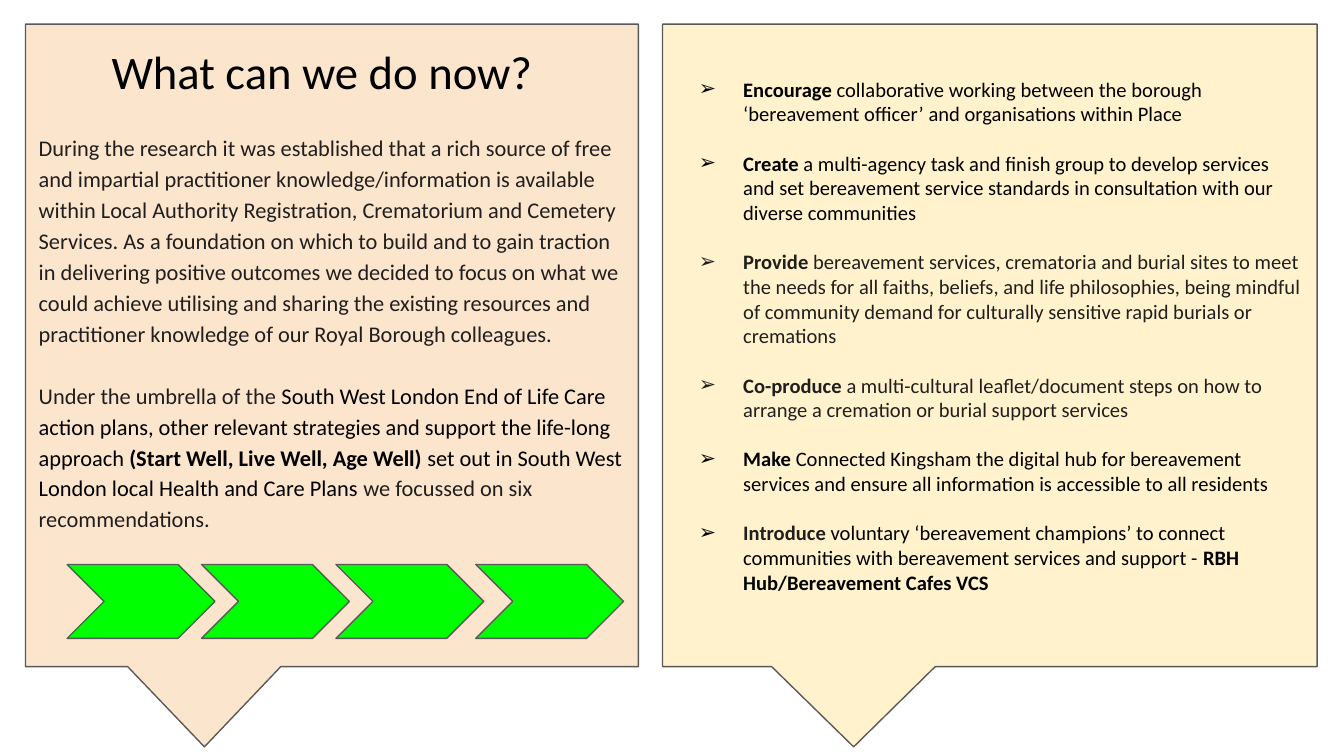
from lxml import etree
from pptx import Presentation
from pptx import util as u
from pptx.dml.color import RGBColor
from pptx.enum import shapes, text
from pptx.oxml.ns import qn

PX = 9144
BLACK, INK, EDGE = "000000", "201F1E", "595959"
PEACH, CREAM, GREEN = "FCE5CD", "FFF2CC", "00FF00"

INTRO = [
    [("During the research it was established that a rich source of free and impartial "
      "practitioner knowledge/information is available within Local Authority Registration, "
      "Crematorium and Cemetery Services. As a foundation on which to build and to gain "
      "traction in delivering positive outcomes we decided to focus on what we could achieve "
      "utilising and sharing the existing resources and practitioner knowledge of our Royal "
      "Borough colleagues.", INK, False)],
    [("Under the umbrella of the ", INK, False),
     ("South West London End of Life Care action plans, other relevant strategies and support "
      "the life-long approach ", BLACK, False),
     ("(Start Well, Live Well, Age Well)", BLACK, True),
     (" set out in South West London local Health and Care Plans ", BLACK, False),
     ("we focussed on six recommendations.", INK, False)],
]

ACTIONS = [
    (BLACK, [("Encourage ", BLACK, True),
             ("collaborative working between the borough ‘bereavement officer’ and "
              "organisations within Place", BLACK, False)]),
    (BLACK, [("Create ", BLACK, True),
             ("a multi-agency task and finish group to develop services and set bereavement "
              "service standards in consultation with our diverse communities", BLACK, False)]),
    (INK, [("Provide ", INK, True),
           ("bereavement services, crematoria and burial sites to meet the needs for all "
            "faiths, beliefs, and life philosophies, being mindful of community demand for "
            "culturally sensitive rapid burials or cremations", INK, False)]),
    (INK, [("Co-produce ", INK, True),
           ("a multi-cultural leaflet/document steps on how to arrange a cremation or burial "
            "support services", INK, False)]),
    (BLACK, [("Make ", BLACK, True),
             ("Connected Kingsham the digital hub for bereavement services and ensure all "
              "information is accessible to all residents", BLACK, False)]),
    (BLACK, [("Introduce ", INK, True),
             ("voluntary ‘bereavement champions’ to connect communities with bereavement "
              "services and support - ", BLACK, False),
             ("RBH Hub/Bereavement Cafes VCS", BLACK, True)]),
]


def px(n):
    """Turn px into EMU."""
    return u.Emu(n * PX)


def rgb(value):
    """Turn a hex string into a colour."""
    return RGBColor.from_string(value)


def add_runs(p, runs, size):
    """Add (words, colour, bold) runs to a paragraph."""
    for words, color, bold in runs:
        r = p.add_run()
        r.text = words
        r.font.name = "Calibri"
        r.font.size = u.Pt(size)
        r.font.bold = bold
        r.font.color.rgb = rgb(color)


def set_frame(tf, anchor, top, bottom):
    """Set wrapping, anchor and insets of a text frame."""
    tf.word_wrap = True
    tf.auto_size = text.MSO_AUTO_SIZE.NONE
    tf.vertical_anchor = anchor
    tf.margin_left = tf.margin_right = px(10)
    tf.margin_top, tf.margin_bottom = px(top), px(bottom)


def add_paragraph(tf, i, gap, spacing):
    """Return the i-th paragraph, left aligned, with a gap above all but the first."""
    p = tf.add_paragraph() if i else tf.paragraphs[0]
    p.alignment = text.PP_ALIGN.LEFT
    p.line_spacing = spacing
    p.space_before = u.Pt(gap if i else 0)
    return p


def add_bullet(p, color):
    """Give a paragraph an arrowhead bullet with a hanging indent."""
    pPr = p._p.get_or_add_pPr()
    pPr.set("marL", str(px(50)))
    pPr.set("indent", str(-px(33)))
    clr = etree.SubElement(pPr, qn("a:buClr"))
    etree.SubElement(clr, qn("a:srgbClr")).set("val", color)
    etree.SubElement(pPr, qn("a:buFont")).set("typeface", "Arial")
    etree.SubElement(pPr, qn("a:buChar")).set("char", "➢")


def add_figure(s, kind, box, fill, adjustments):
    """Add a filled, thinly outlined preset shape."""
    sp = s.shapes.add_shape(kind, *map(px, box))
    sp.shadow.inherit = False
    for i, value in enumerate(adjustments):
        sp.adjustments[i] = value
    sp.fill.solid()
    sp.fill.fore_color.rgb = rgb(fill)
    sp.line.color.rgb = rgb(EDGE)
    sp.line.width = u.Pt(0.75)
    return sp


def add_callout(s, box, fill):
    """Add a square-cornered speech callout."""
    return add_figure(s, shapes.MSO_SHAPE.ROUNDED_RECTANGULAR_CALLOUT, box, fill,
                      (-0.208, 0.625, 0))


def place(s, sp, box):
    """Move a placeholder to a box and bring it to the front."""
    sp.left, sp.top, sp.width, sp.height = map(px, box)
    s.shapes._spTree.append(sp._element)


def intro_panel(s, box):
    """Build the left callout with title, introduction and chevrons."""
    x, y, w, h = box
    tf = add_callout(s, box, PEACH).text_frame
    set_frame(tf, text.MSO_ANCHOR.MIDDLE, 10, 31)
    for i, runs in enumerate(INTRO):
        add_runs(add_paragraph(tf, i, 16.8, 1.15), runs, 12)
    for dx in (31, 131, 231, 335):
        add_figure(s, shapes.MSO_SHAPE.CHEVRON, (x + dx, y + 402, 110, 55), GREEN, (0.5,))
    title = s.shapes.title
    place(s, title, (x + 54, y + 4, 348, 62))
    set_frame(title.text_frame, text.MSO_ANCHOR.TOP, 10, 10)
    p = add_paragraph(title.text_frame, 0, 0, 1.0)
    add_runs(p, [("What can we do now?", BLACK, False)], 25)


def actions_panel(s, box):
    """Build the right callout with the bulleted recommendations."""
    x, y, w, h = box
    add_callout(s, box, CREAM)
    body = s.placeholders[1]
    place(s, body, (x, y + 39, w, h - 78))
    tf = body.text_frame
    set_frame(tf, text.MSO_ANCHOR.TOP, 0, 0)
    for i, (color, runs) in enumerate(ACTIONS):
        p = add_paragraph(tf, i, 13.2, 1.0)
        add_bullet(p, color)
        add_runs(p, runs, 11)


def main():
    """Build and save the slide."""
    prs = Presentation()
    prs.slide_width = px(1000)
    prs.slide_height = u.Emu(prs.slide_width * 9 // 16)
    s = prs.slides.add_slide(prs.slide_layouts[1])
    intro_panel(s, (19, 18, 456, 478))
    actions_panel(s, (493, 18, 487, 478))
    prs.save("out.pptx")


if __name__ == "__main__":
    main()
